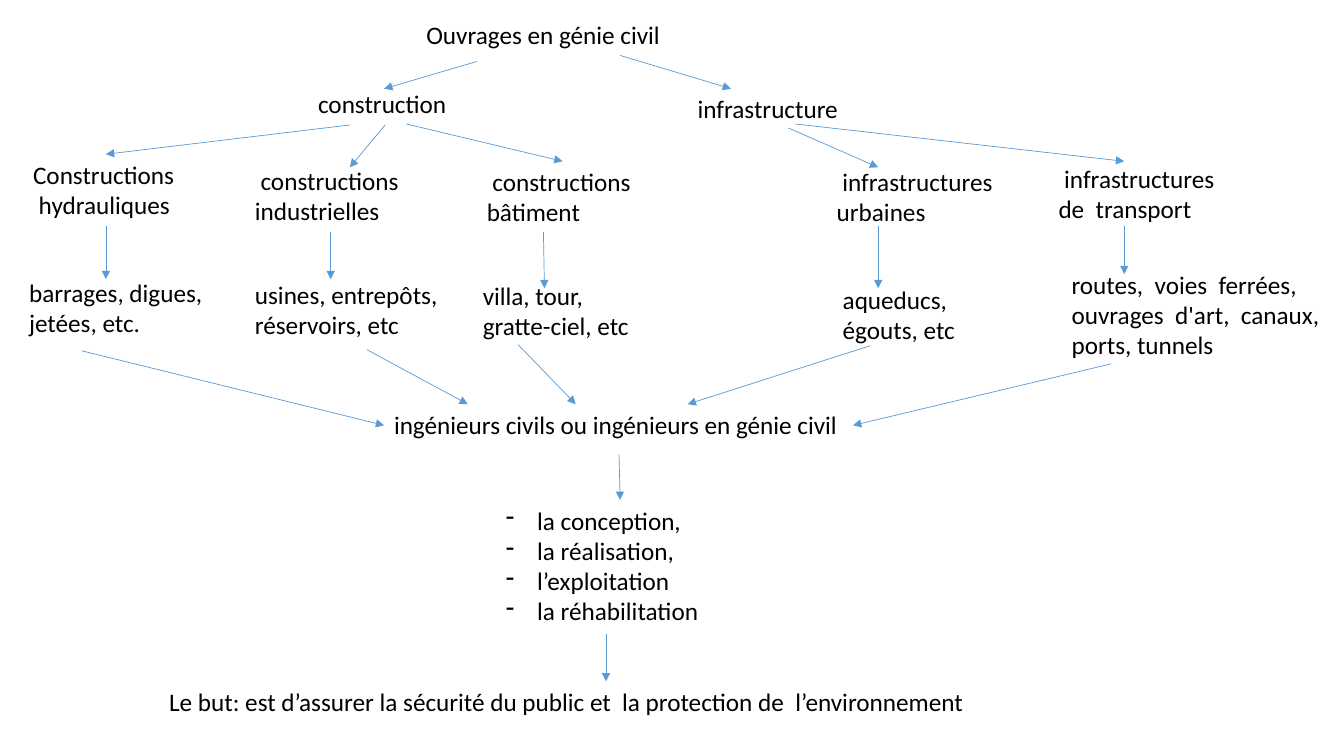
import pptx
import pptx.util
import pptx.dml.color
import pptx.enum.shapes
import pptx.enum.text
import pptx.oxml
import pptx.oxml.ns
from lxml import etree

Inches = pptx.util.Inches
Pt = pptx.util.Pt
COLORS = {"text": "000000", "arrow": "5B9BD5"}
FONT = "Calibri"
LINE = 0.3  # height of one line of text
PAD = 0.1  # top and bottom insets together

# Points are offsets from the top left corner of each column.
COLUMNS = [
    {"at": (0.23, 1.53), "wide": 1.63, "head": ["Constructions", " hydrauliques"],
     "low": (-0.04, 1.17), "span": 2, "works": ["barrages, digues,", "jetées, etc."],
     "arrows": [((3.24, -0.29), (0.82, 0)), ((0.82, 0.71), (0.82, 1.24)),
                ((0.58, 1.95), (3.58, 2.69))]},
    {"at": (2.43, 1.59), "wide": 1.7, "head": [" constructions", "industrielles"],
     "low": (0, 1.13), "span": 2.09, "works": ["usines, entrepôts,", "réservoirs, etc"],
     "arrows": [((1.39, -0.35), (1.04, 0.07)), ((0.85, 0.71), (0.85, 1.18)),
                ((1.21, 1.88), (2.21, 2.42))]},
    {"at": (4.73, 1.6), "wide": 1.7, "head": [" constructions", "bâtiment"],
     "low": (-0.04, 1.13), "span": 1.67, "works": ["villa, tour,", "gratte-ciel, etc"],
     "arrows": [((-0.7, -0.37), (0.85, 0)), ((0.66, 0.7), (0.67, 1.26)),
                ((0.41, 1.82), (0.98, 2.41))]},
    {"at": (8.2, 1.6), "wide": 1.82, "head": [" infrastructures", "urbaines"],
     "low": (0.06, 1.17), "span": 1.33, "works": ["aqueducs,", "égouts, etc"],
     "arrows": [((-0.38, -0.33), (0.51, 0.06)), ((0.51, 0.64), (0.51, 1.26)),
                ((0.43, 1.83), (-1.38, 2.41))]},
    {"at": (10.4, 1.57), "wide": 1.88, "head": [" infrastructures", "de  transport"],
     "low": (0.13, 1.05), "span": 2.8,
     "works": ["routes,  voies  ferrées,", "ouvrages  d'art,  canaux,", "ports, tunnels"],
     "arrows": [((-2.51, -0.34), (0.75, 0.03)), ((0.75, 0.67), (0.75, 1.15)),
                ((0.62, 2.04), (-1.94, 2.65))]},
]


def shift(box, point):
    return box[0] + point[0], box[1] + point[1]


def write(slide, at, width, lines, size=18, color="text", wrap=True, dash=False):
    """Add a text box with one paragraph for each line."""
    height = PAD + LINE * len(lines)
    shape = slide.shapes.add_textbox(*map(Inches, (*at, width, height)))
    frame = shape.text_frame
    frame.word_wrap = wrap
    frame.auto_size = pptx.enum.text.MSO_AUTO_SIZE.SHAPE_TO_FIT_TEXT
    for i, line in enumerate(lines):
        para = frame.paragraphs[0] if i == 0 else frame.add_paragraph()
        if dash:
            props = para._p.get_or_add_pPr()
            props.set("marL", str(Inches(0.31)))
            props.set("indent", str(-Inches(0.31)))
            mark = etree.SubElement(props, pptx.oxml.ns.qn("a:buChar"))
            mark.set("char", "-")
        run = para.add_run()
        run.text = line
        run.font.name = FONT
        run.font.size = Pt(size)
        run.font.color.rgb = pptx.dml.color.RGBColor.from_string(COLORS[color])


def arrow(slide, box, start, end):
    points = (*shift(box, start), *shift(box, end))
    link = slide.shapes.add_connector(
        pptx.enum.shapes.MSO_CONNECTOR.STRAIGHT, *map(Inches, points))
    link.line.color.rgb = pptx.dml.color.RGBColor.from_string(COLORS["arrow"])
    link.line.width = Pt(0.5)
    tip = etree.SubElement(link.line._get_or_add_ln(), pptx.oxml.ns.qn("a:tailEnd"))
    tip.set("type", "triangle")
    etree.SubElement(link._element.spPr, pptx.oxml.ns.qn("a:effectLst"))


def root(slide, box):
    """Place the title and its two main branches."""
    write(slide, shift(box, (1.13, 0)), 2.91, ["Ouvrages en génie civil"])
    write(slide, shift(box, (0, 0.69)), 1.64, [" construction"])
    write(slide, shift(box, (3.82, 0.74)), 1.65, ["infrastructure"])
    arrow(slide, box, (1.73, 0.47), (0.81, 0.74))
    arrow(slide, box, (3.15, 0.41), (4.25, 0.74))


def column(slide, box, data):
    """Place one kind of structure, its examples and its arrows."""
    write(slide, box, data["wide"], data["head"], wrap=False)
    write(slide, shift(box, data["low"]), data["span"], data["works"], wrap=False)
    for start, end in data["arrows"]:
        arrow(slide, box, start, end)


def goal(slide, box):
    """Place the engineers, their tasks and the final aim."""
    write(slide, shift(box, (2.23, 0)), 4.66,
          ["ingénieurs civils ou ingénieurs en génie civil"], wrap=False)
    write(slide, shift(box, (3.34, 0.95)), 2.46,
          ["la conception,", "la réalisation,", "l’exploitation", "la réhabilitation"],
          dash=True)
    write(slide, shift(box, (0, 2.75)), 9.14,
          ["Le but: est d’assurer la sécurité du public et  la protection de  l’environnement"])
    arrow(slide, box, (4.56, 0.5), (4.57, 0.95))
    arrow(slide, box, (4.43, 2.28), (4.43, 2.75))


def main():
    deck = pptx.Presentation()
    deck.slide_width = Inches(13.33)
    deck.slide_height = Inches(7.5)
    slide = deck.slides.add_slide(deck.slide_layouts[6])
    root(slide, (3, 0.14))
    for data in COLUMNS:
        column(slide, data["at"], data)
    goal(slide, (1.58, 4.01))
    deck.save("out.pptx")


if __name__ == "__main__":
    main()
